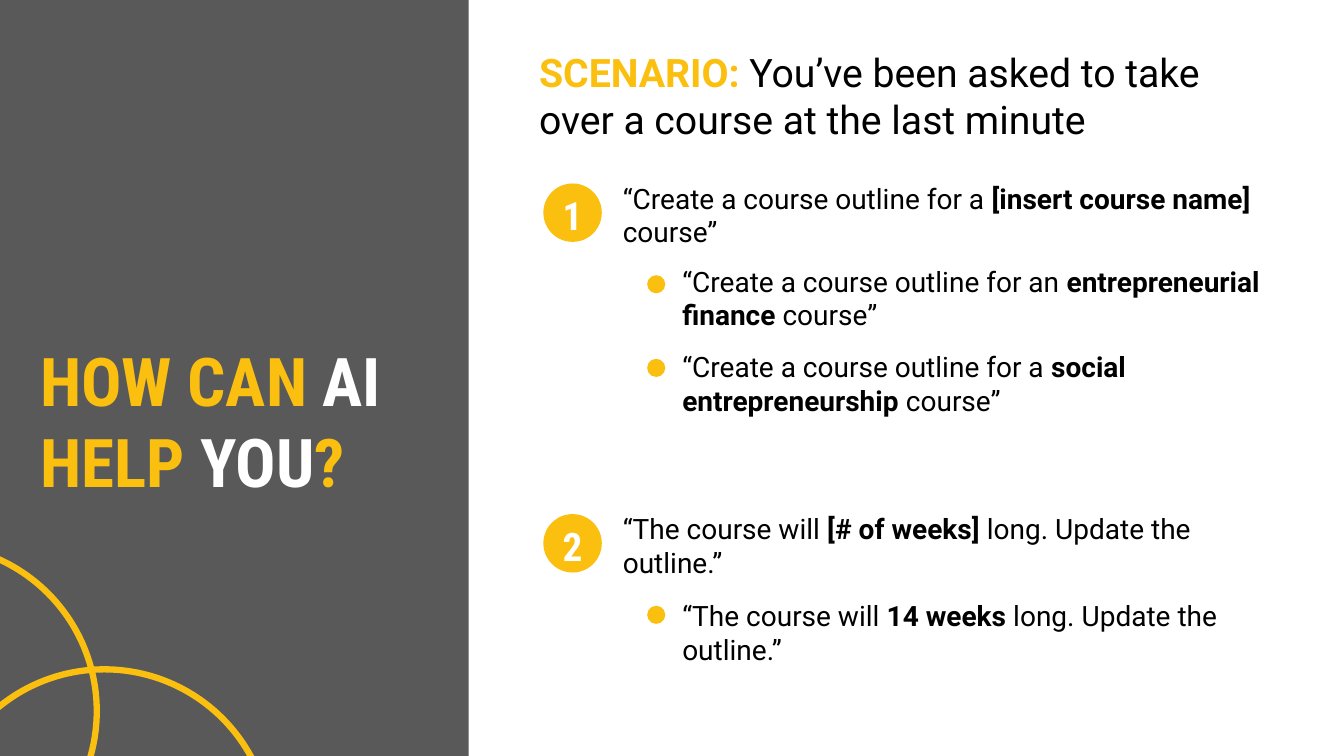
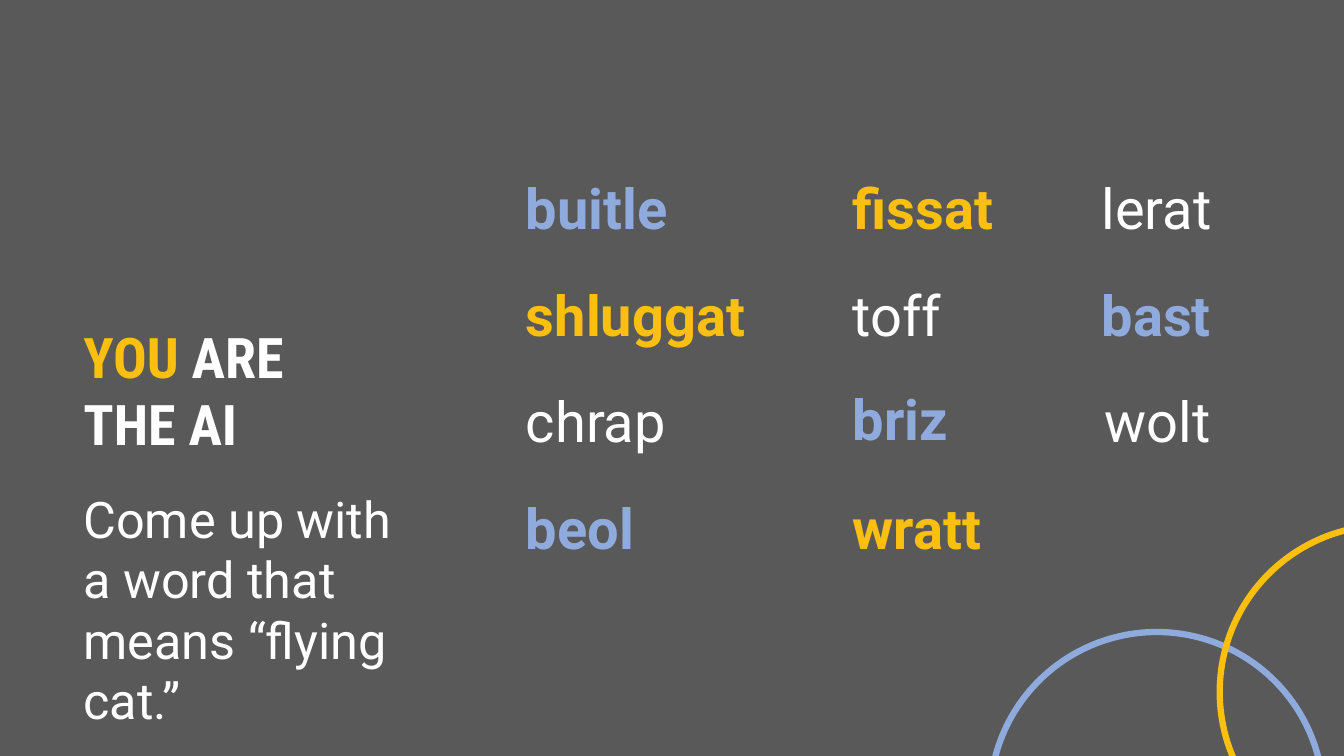
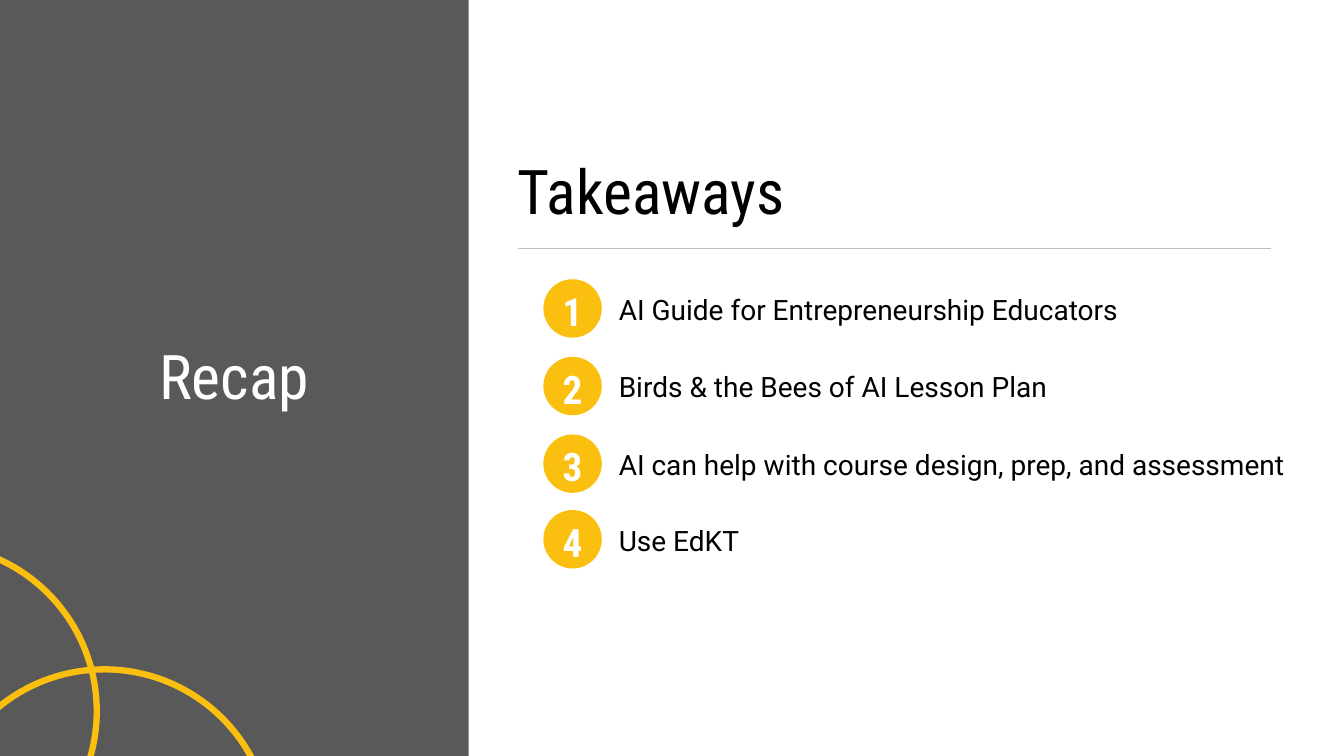
from pptx import Presentation
from pptx import util as u
from pptx.dml.color import RGBColor
from pptx.enum import shapes, text

# Shared style: 100 px to the inch
SCALE = 9144
GRAY, YELLOW, BLUE, WHITE, BLACK, RULE = (
    "595959", "FBBF10", "8FAADC", "FFFFFF", "000000", "BFBFBF")
BODY, HEAD = "Roboto", "Roboto Condensed"
BOLD = {"bold": True}


def px(*lengths):
    return [u.Emu(length * SCALE) for length in lengths]


def color(value):
    return RGBColor.from_string(value)


class Deck:
    def __init__(self):
        self.presentation = Presentation()
        self.presentation.slide_width, self.presentation.slide_height = (
            u.Inches(13.333), u.Inches(7.5))
        self.slide = None

    def add_slide(self, background=WHITE):
        self.slide = self.presentation.slides.add_slide(
            self.presentation.slide_layouts[6])
        fill = self.slide.background.fill
        fill.solid()
        fill.fore_color.rgb = color(background)

    def set_text(self, frame, paragraphs, align=None, **style):
        """Fill a frame; each paragraph is a list of (text, format) runs."""
        for index, runs in enumerate(paragraphs):
            paragraph = frame.add_paragraph() if index else frame.paragraphs[0]
            paragraph.alignment = align
            for words, changes in runs:
                run = paragraph.add_run()
                run.text = words
                values = {**style, **changes}
                run.font.color.rgb = color(values.pop("color"))
                run.font.size = u.Pt(values.pop("size"))
                for name, value in values.items():
                    setattr(run.font, name, value)

    def text(self, left, top, width, height, *paragraphs, align=None,
             size=20, name=BODY, color=BLACK, bold=False):
        box = self.slide.shapes.add_textbox(*px(left, top, width, height))
        box.text_frame.word_wrap = True
        self.set_text(box.text_frame, paragraphs, align,
                      size=size, name=name, color=color, bold=bold)

    def shape(self, kind, left, top, width, height, fill=None, line=None):
        shape = self.slide.shapes.add_shape(kind, *px(left, top, width, height))
        shape.shadow.inherit = False
        if fill:
            shape.fill.solid()
            shape.fill.fore_color.rgb = color(fill)
        else:
            shape.fill.background()
        if line:
            shape.line.color.rgb = color(line)
            shape.line.width = u.Pt(4.5)
        else:
            shape.line.fill.background()
        return shape

    def panel(self):
        self.shape(shapes.MSO_SHAPE.RECTANGLE, 0, 0, 465, 750, GRAY)

    def ring(self, left, top, line=YELLOW):
        self.shape(shapes.MSO_SHAPE.OVAL, left, top, 331, 331, line=line)

    def corner_rings(self):
        self.ring(-235, 540)
        self.ring(-62, 664)

    def dot(self, left, top, size):
        return self.shape(shapes.MSO_SHAPE.OVAL, left, top, size, size, YELLOW)

    def badge(self, top, number):
        frame = self.dot(539, top, 58).text_frame
        frame.margin_left = frame.margin_right = frame.margin_bottom = 0
        frame.margin_top = px(5)[0]
        frame.word_wrap = False
        frame.vertical_anchor = text.MSO_ANCHOR.MIDDLE
        self.set_text(frame, [[(str(number), {})]], text.PP_ALIGN.CENTER,
                      size=28, name=HEAD, color=WHITE, bold=True)

    def rule(self, left, right, top):
        line = self.slide.shapes.add_connector(
            shapes.MSO_CONNECTOR.STRAIGHT, *px(left, top, right, top))
        line.line.color.rgb = color(RULE)
        line.line.width = u.Pt(0.75)
        properties = line._element.spPr
        properties.append(properties.makeelement(
            "{http://schemas.openxmlformats.org/drawingml/2006/main}effectLst", {}))


def scenario_slide(deck):
    deck.add_slide()
    deck.panel()
    white = {"color": WHITE}
    deck.text(30, 332, 406, 172,
              [("HOW CAN ", {}), ("AI", white)],
              [("HELP ", {}), ("YOU", white), ("?", {})],
              size=48, name=HEAD, color=YELLOW, bold=True)
    deck.text(525, 43, 743, 104,
              [("SCENARIO: ", {"color": YELLOW, "bold": True}),
               ("You’ve been asked to take over a course at the last minute", {})],
              size=28)

    # Numbered prompts
    prompts = [
        (175, "“Create a course outline for a ", "[insert course name] ", "course”"),
        (503, "“The course will ", "[# of weeks]", " long. Update the outline.”"),
    ]
    for number, (top, start, key, end) in enumerate(prompts, 1):
        deck.text(608, top, 651, 77, [(start, {}), (key, BOLD), (end, {})])
        deck.badge(top + 7, number)

    # Examples: text top, dot top, words
    examples = [
        (257, 273, "“Create a course outline for an ", "entrepreneurial finance",
         " course”"),
        (342, 356, "“Create a course outline for a ", "social entrepreneurship",
         " course”"),
        (589, 601, "“The course will ", "14 weeks", " long. Update the outline.”"),
    ]
    for top, dot_top, start, key, end in examples:
        deck.text(667, top, 602, 77, [(start, {}), (key, BOLD), (end, {})])
        deck.dot(642, dot_top, 18)
    deck.corner_rings()


def word_slide(deck):
    deck.add_slide(GRAY)
    # Word grid, column by column
    columns = [
        (512, [("buitle", BLUE), ("shluggat", YELLOW), ("chrap", WHITE), ("beol", BLUE)]),
        (836, [("fissat", YELLOW), ("toff", WHITE), ("briz", BLUE), ("wratt", YELLOW)]),
        (1083, [("lerat", WHITE), ("bast", BLUE), ("wolt", WHITE)]),
    ]
    nudges = {"briz": (0, -2), "wolt": (3, 0)}
    for left, words in columns:
        for row, (word, tint) in enumerate(words):
            right, down = nudges.get(word, (0, 0))
            deck.text(left + right, 167 + row * 106 + down, 247, 77, [(word, {})],
                      size=40, color=tint, bold=tint != WHITE)

    # Task
    deck.text(73, 479, 335, 252,
              [("Come up with a word that means “flying cat.”", {})],
              size=36, color=WHITE)
    deck.ring(982, 627, BLUE)
    deck.ring(1210, 521)
    deck.text(73, 315, 353, 145,
              [("YOU", {"color": YELLOW}), (" ARE", {})], [("THE AI", {})],
              size=40, name=HEAD, color=WHITE, bold=True)


def recap_slide(deck):
    deck.add_slide()
    deck.panel()
    deck.corner_rings()
    deck.text(56, 330, 353, 84, [("Recap", {})], align=text.PP_ALIGN.CENTER,
              size=44, name=HEAD, color=WHITE)
    deck.text(504, 147, 764, 84, [("Takeaways", {})], size=44, name=HEAD)
    deck.rule(514, 1261, 247)

    # Numbered takeaways
    takeaways = [
        (277, "AI Guide for Entrepreneurship Educators"),
        (354, "Birds & the Bees of AI Lesson Plan"),
        (431, "AI can help with course design, prep, and assessment"),
        (506, "Use EdKT"),
    ]
    for number, (top, words) in enumerate(takeaways, 1):
        deck.text(604, top + 8, 681, 44, [(words, {})])
        deck.badge(top, number)


def main():
    deck = Deck()
    scenario_slide(deck)
    word_slide(deck)
    recap_slide(deck)
    deck.presentation.save("out.pptx")


if __name__ == "__main__":
    main()
